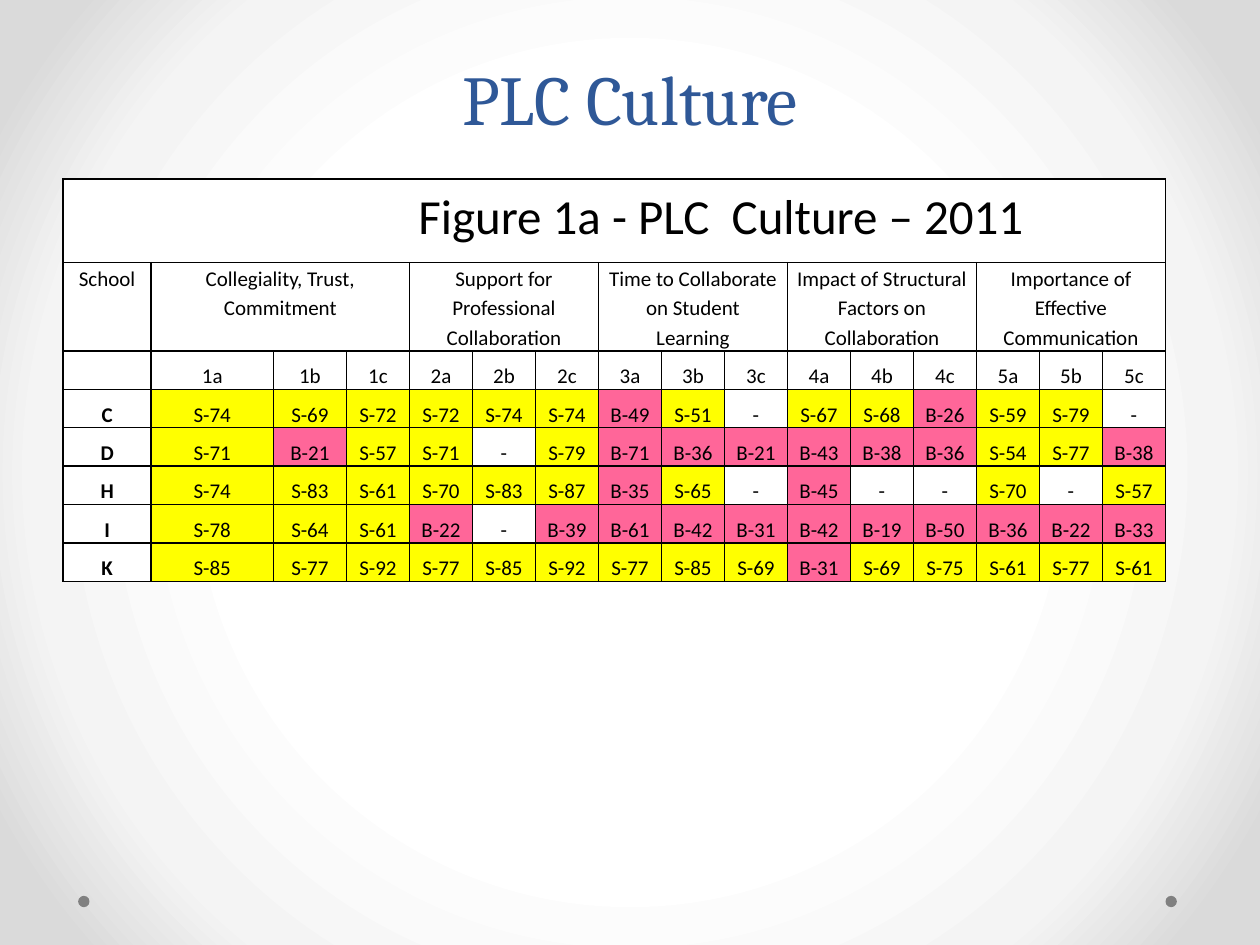
from dataclasses import dataclass

from lxml import etree
from pptx import Presentation
from pptx.dml.color import RGBColor
from pptx.enum.shapes import MSO_SHAPE
from pptx.enum.text import MSO_ANCHOR, PP_ALIGN
from pptx.oxml.ns import qn
from pptx.util import Inches, Pt

CENTER = PP_ALIGN.CENTER
BOTTOM, TOP = MSO_ANCHOR.BOTTOM, MSO_ANCHOR.TOP
ELLIPSE = MSO_SHAPE.OVAL
GRID_COLUMNS = 100  # square grid: 100 columns by 75 rows


@dataclass(frozen=True)
class Theme:
    heading_font: str = "Cambria"
    body_font: str = "Calibri"
    heading: str = "2F5897"
    ink: str = "000000"
    paper: str = "FFFFFF"
    strength: str = "FFFF00"
    barrier: str = "FF6699"
    dot: str = "808080"
    backdrop: tuple = ((50, "FFFFFF"), (76, "F4F4F4"), (92, "DADADA"))
    heading_size: int = 40
    heading_leading: int = 58
    caption_size: int = 28
    body_size: int = 12
    border: int = 1


class SlideBuilder:
    def __init__(self, deck, theme):
        self.theme = theme
        self.slide = deck.slides.add_slide(deck.slide_layouts[6])
        self.unit = deck.slide_width / GRID_COLUMNS

    def grid(self, *lengths):
        return [round(length * self.unit) for length in lengths]

    def style(self, paragraph, font, size, color, spacing, bold=False):
        paragraph.alignment = CENTER
        paragraph.line_spacing = spacing
        paragraph.font.name = font
        paragraph.font.size = Pt(size)
        paragraph.font.bold = bold
        paragraph.font.color.rgb = RGBColor.from_string(color)

    def background(self):
        fill = self.slide.background.fill
        fill.gradient()
        gradient = fill._fill._gradFill
        for child in list(gradient):
            gradient.remove(child)
        stops = etree.SubElement(gradient, qn("a:gsLst"))
        for position, color in self.theme.backdrop:
            stop = etree.SubElement(stops, qn("a:gs"), pos=str(position * 1000))
            etree.SubElement(stop, qn("a:srgbClr"), val=color)
        circle = etree.SubElement(gradient, qn("a:path"), attrib={"path": "circle"})
        etree.SubElement(circle, qn("a:fillToRect"), dict.fromkeys("ltrb", "50000"))

    def dot(self, *box):
        dot = self.slide.shapes.add_shape(ELLIPSE, *self.grid(*box))
        dot.shadow.inherit = False
        dot.fill.solid()
        dot.fill.fore_color.rgb = RGBColor.from_string(self.theme.dot)
        dot.line.fill.background()

    def title(self, text, *box):
        frame = self.slide.shapes.add_textbox(*self.grid(*box)).text_frame
        frame.word_wrap = True
        frame.vertical_anchor = BOTTOM
        frame.text = text
        theme = self.theme
        self.style(frame.paragraphs[0], theme.heading_font, theme.heading_size,
                   theme.heading, Pt(theme.heading_leading))

    def table(self, left, top, columns, rows):
        frame = self.slide.shapes.add_table(
            len(rows), len(columns),
            *self.grid(left, top, sum(columns), sum(rows)))
        table = frame.table
        table.first_row = table.horz_banding = False
        for column, width in zip(table.columns, self.grid(*columns)):
            column.width = width
        for row, height in zip(table.rows, self.grid(*rows)):
            row.height = height
        for row in table.rows:
            for cell in row.cells:
                self.cell(cell)
        return table

    def cell(self, cell, text="", spacing=1.5, size=None, bold=False, indent=0):
        theme = self.theme
        fills = {"S-": theme.strength, "B-": theme.barrier}
        cell.fill.solid()
        cell.fill.fore_color.rgb = RGBColor.from_string(
            fills.get(text[:2], theme.paper))
        cell.margin_left, cell.margin_right, start = self.grid(0.7, 0.7, indent)
        cell.margin_top = cell.margin_bottom = 0
        cell.vertical_anchor = TOP
        cell.text = text
        paragraph = cell.text_frame.paragraphs[0]
        self.style(paragraph, theme.body_font, size or theme.body_size,
                   theme.ink, spacing, bold)
        if indent:
            paragraph._p.get_or_add_pPr().set("marL", str(start))
        self.borders(cell)

    def borders(self, cell):
        properties = cell._tc.get_or_add_tcPr()
        for index, side in enumerate(("a:lnL", "a:lnR", "a:lnT", "a:lnB")):
            for old in properties.findall(qn(side)):
                properties.remove(old)
            line = etree.Element(qn(side), w=str(Pt(self.theme.border)))
            ink = etree.SubElement(line, qn("a:solidFill"))
            etree.SubElement(ink, qn("a:srgbClr"), val=self.theme.ink)
            properties.insert(index, line)


TOPICS = (
    "Collegiality, Trust, Commitment",
    "Support for Professional Collaboration",
    "Time to Collaborate on Student Learning",
    "Impact of Structural Factors on Collaboration",
    "Importance of Effective Communication",
)
ITEMS = "abc"
SCORES = {
    "C": "S-74 S-69 S-72 S-72 S-74 S-74 B-49 S-51 - S-67 S-68 B-26 S-59 S-79 -",
    "D": "S-71 B-21 S-57 S-71 - S-79 B-71 B-36 B-21 B-43 B-38 B-36 S-54 S-77 B-38",
    "H": "S-74 S-83 S-61 S-70 S-83 S-87 B-35 S-65 - B-45 - - S-70 - S-57",
    "I": "S-78 S-64 S-61 B-22 - B-39 B-61 B-42 B-31 B-42 B-19 B-50 B-36 B-22 B-33",
    "K": "S-85 S-77 S-92 S-77 S-85 S-92 S-77 S-85 S-69 B-31 S-69 S-75 S-61 S-77 S-61",
}


def main():
    deck = Presentation()
    deck.slide_width, deck.slide_height = Inches(10), Inches(7.5)
    theme = Theme()
    page = SlideBuilder(deck, theme)

    # Backdrop and corner dots
    page.background()
    for left in (92.5, 6.2):
        page.dot(left, 71.1, 0.9, 0.9)

    # Heading
    page.title("PLC Culture", 5, 1.6, 90, 10)

    # Culture table: caption and topic headers
    columns = [7, 9.7, 5.8] + [5] * 13
    rows = [6.65, 7] + [3.05] * (1 + len(SCORES))
    culture = page.table(5, 14.2, columns, rows)
    caption = culture.cell(0, 0)
    caption.merge(culture.cell(0, len(columns) - 1))
    page.cell(caption, "Figure 1a - PLC  Culture – 2011", 1.15,
              theme.caption_size, indent=16.9)
    page.cell(culture.cell(1, 0), "School", 1.15)
    for number, topic in enumerate(TOPICS):
        first = 1 + number * len(ITEMS)
        header = culture.cell(1, first)
        header.merge(culture.cell(1, first + len(ITEMS) - 1))
        page.cell(header, topic, 1.15)
        for offset, item in enumerate(ITEMS):
            page.cell(culture.cell(2, first + offset), f"{number + 1}{item}")

    # Scores of each school
    for row, (school, scores) in enumerate(SCORES.items(), start=3):
        page.cell(culture.cell(row, 0), school, bold=True)
        for column, score in enumerate(scores.split(), start=1):
            page.cell(culture.cell(row, column), score)

    deck.save("out.pptx")


if __name__ == "__main__":
    main()
